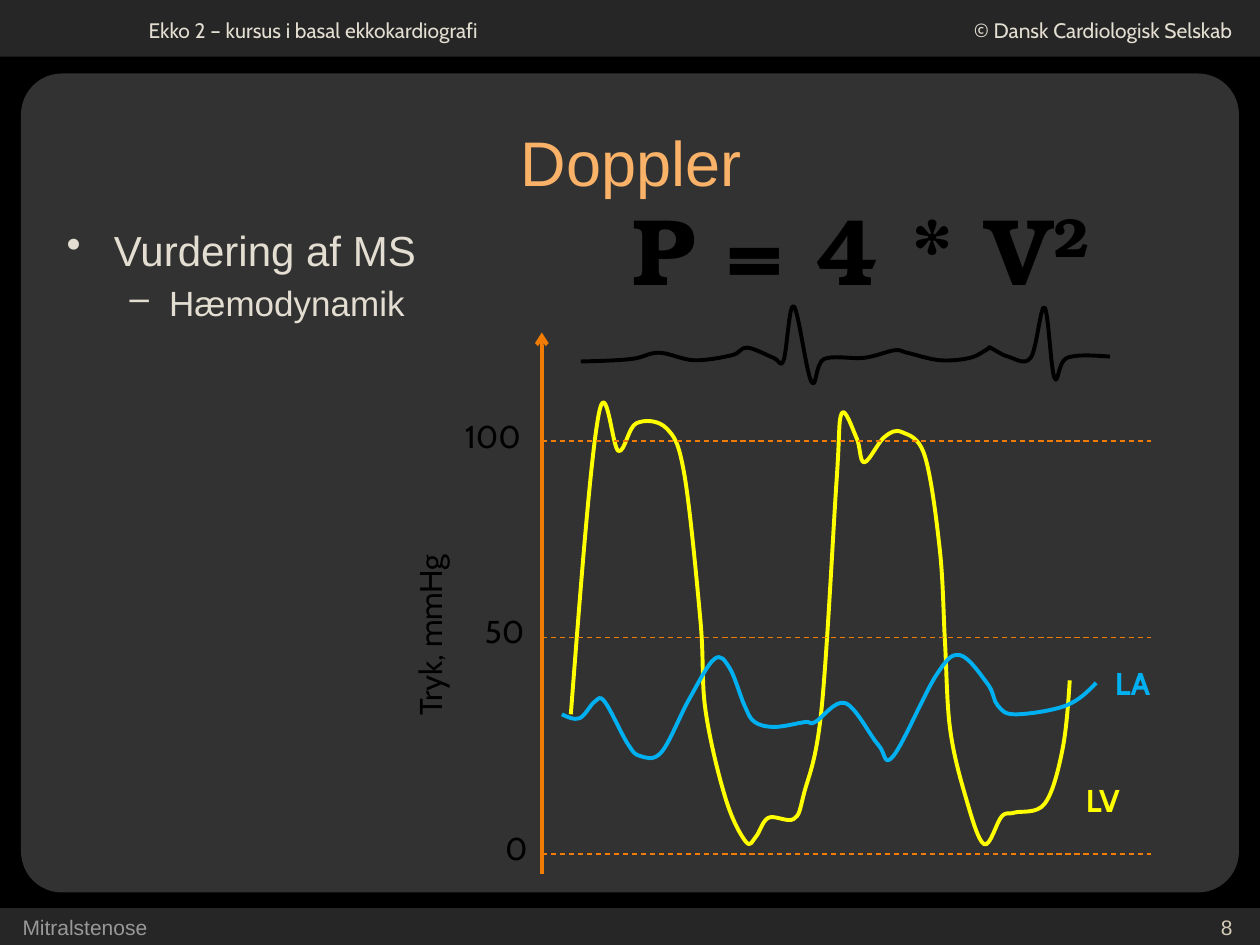
from lxml.etree import SubElement
from pptx import Presentation
from pptx.dml.color import RGBColor
from pptx.enum.dml import MSO_LINE
from pptx.enum.shapes import MSO_CONNECTOR, MSO_SHAPE
from pptx.enum.text import MSO_ANCHOR, PP_ALIGN
from pptx.oxml.ns import qn
from pptx.util import Pt

BLACK = RGBColor(0x00, 0x00, 0x00)
BAR = RGBColor(0x26, 0x26, 0x26)
PANEL = RGBColor(0x32, 0x32, 0x32)
CREAM = RGBColor(0xE3, 0xDE, 0xD1)
SAND = RGBColor(0xD3, 0xCB, 0xB6)
GREY = RGBColor(0x99, 0x99, 0x99)
PEACH = RGBColor(0xF9, 0xB2, 0x68)
ORANGE = RGBColor(0xF0, 0x7C, 0x03)
YELLOW = RGBColor(0xFF, 0xFF, 0x00)
BLUE = RGBColor(0x00, 0xB0, 0xF0)

PANELS = [
    (MSO_SHAPE.RECTANGLE, (0, 519, 720, 21), BAR),
    (MSO_SHAPE.RECTANGLE, (0, 0, 720, 32.4), BAR),
    (MSO_SHAPE.ROUNDED_RECTANGLE, (12, 42, 696, 468), PANEL),
]

# text, box, font, size, colour, bold, alignment
HEADER_FOOTER = [
    ("Ekko 2 – kursus i basal ekkokardiografi", (77.8, 6.5, 270, 21.6),
     "Cabin", 12, CREAM, False, PP_ALIGN.LEFT),
    ("© Dansk Cardiologisk Selskab", (496, 6.5, 215.3, 21.6),
     "Cabin", 12, CREAM, False, PP_ALIGN.RIGHT),
    ("8", (543.6, 519, 167.8, 18), "Arial", 12, SAND, False, PP_ALIGN.RIGHT),
    ("Mitralstenose", (5.8, 519, 228.2, 18), "Arial", 12, GREY, False, PP_ALIGN.LEFT),
]
CURVE_LABELS = [
    ("LV", (613.4, 442.8, 50.4, 28.8), YELLOW),
    ("LA", (630, 375.8, 50.4, 28.8), BLUE),
]

# text, bullet, level, size, left margin, hanging indent, space before
BULLETS = [
    ("Vurdering af MS", "•", 0, 24, 27, 27, 0),
    ("Hæmodynamik", "–", 1, 20, 58.5, 22.5, 4),
]

AXIS_X, AXIS_TOP, AXIS_BOTTOM, GRID_RIGHT = 309.6, 190, 499.7, 658
# value, height of the grid line, left and top of the value
GRID = [("0", 488, 281.5, 470.2), ("50", 364.3, 270, 346.3), ("100", 252, 258.5, 234.7)]

LV_PRESSURE = [
    (326.2, 408.2), (342, 237.6), (353.5, 257.8), (363.6, 241.9), (380.9, 244.8),
    (391, 270.7), (400.3, 355), (403.2, 406.1), (414.7, 456.5), (426.2, 481),
    (432, 478.1), (439.2, 467.3), (453.6, 468), (459.4, 453.6), (469.4, 406.1),
    (478.1, 274.3), (481, 236.2), (489.6, 250.6), (493.9, 264.2), (505.4, 249.8),
    (515.5, 247), (528.5, 260.6), (537.1, 314.6), (540, 366.5), (542.9, 416.2),
    (551.5, 454.3), (562.3, 482.4), (572.4, 466.6), (579.6, 464.4), (596.9, 459.4),
    (607, 429.1), (611.3, 388.8),
]
LA_PRESSURE = [
    (321.1, 408.2), (331.2, 410.4), (339.8, 401), (345.6, 401), (358.6, 424.8),
    (365.8, 432), (378, 429.8), (393.8, 399.6), (408.2, 376.6), (416.9, 381.6),
    (425.5, 403.2), (431.3, 412.6), (442.8, 415.4), (460.1, 412.6), (465.8, 412.6),
    (483.1, 401.8), (501.8, 425.5), (510.5, 432), (535, 385.9), (548.6, 374.4),
    (564.5, 391), (570.2, 403.2), (580.3, 408.2), (609.1, 403.2), (626.4, 390.2),
]
ECG = [
    (331.9, 206.6), (360.7, 205.2), (376.6, 201.6), (396.7, 205.9), (418.3, 203),
    (427, 198.7), (442.1, 204.5), (447.8, 205.9), (453.6, 175), (463.7, 218.2),
    (470.9, 205.2), (493.9, 204.5), (511.2, 200.2), (518.4, 201.6), (537.1, 205.9),
    (554.4, 204.5), (564.5, 199.4), (565.9, 198.7), (576, 203.8), (589, 204.5),
    (596.9, 175.7), (602.6, 216), (609.8, 204.5), (634.3, 203.8),
]
CURVES = [(LV_PRESSURE, YELLOW), (LA_PRESSURE, BLUE), (ECG, BLACK)]


def style(font, name, size, color, bold=False):
    font.name, font.size, font.bold = name, Pt(size), bold
    font.color.rgb = color


def add_text(shapes, text, box, name, size, color, bold=False, align=PP_ALIGN.LEFT):
    label = shapes.add_textbox(*map(Pt, box))
    label.text_frame.word_wrap = True
    label.text_frame.text = text
    paragraph = label.text_frame.paragraphs[0]
    paragraph.alignment = align
    style(paragraph.runs[0].font, name, size, color, bold)
    return label


def add_line(shapes, start, end, width):
    line = shapes.add_connector(MSO_CONNECTOR.STRAIGHT, *map(Pt, start + end))
    line.line.color.rgb = ORANGE
    line.line.width = Pt(width)
    SubElement(line._element.spPr, qn("a:effectLst"))
    return line


def bezier_points(knots):
    """Control and end points of a smooth curve whose slope at each knot follows its neighbours."""
    slopes = [((c[0] - a[0]) / 6, (c[1] - a[1]) / 6) for a, c in zip(knots, knots[2:])]
    leaving = [(x + dx, y + dy) for (x, y), (dx, dy) in zip(knots[1:], slopes)]
    arriving = [(x - dx, y - dy) for (x, y), (dx, dy) in zip(knots[1:], slopes)]

    def middle(a, b):
        return (a[0] + b[0]) / 2, (a[1] + b[1]) / 2

    leaving.insert(0, middle(knots[0], arriving[0]))
    arriving.append(middle(leaving[-1], knots[-1]))
    return [point for segment in zip(leaving, arriving, knots[1:]) for point in segment]


def add_curve(shapes, knots, color):
    builder = shapes.build_freeform(*map(Pt, knots[0]))
    builder.add_line_segments([(Pt(x), Pt(y)) for x, y in bezier_points(knots)], close=False)
    curve = builder.convert_to_shape()
    path = curve._element.find(".//" + qn("a:path"))
    lines = path.findall(qn("a:lnTo"))
    for segment in zip(lines[::3], lines[1::3], lines[2::3]):
        cubic = SubElement(path, qn("a:cubicBezTo"))
        for line_to in segment:
            cubic.append(line_to[0])
            path.remove(line_to)
    curve.shadow.inherit = False
    curve.fill.background()
    curve.line.color.rgb = color
    curve.line.width = Pt(2.25)


def add_bullets(shapes):
    frame = shapes.add_textbox(*map(Pt, (31, 124.5, 365.8, 144))).text_frame
    frame.word_wrap = True
    for i, (text, bullet, level, size, margin, hanging, before) in enumerate(BULLETS):
        paragraph = frame.add_paragraph() if i else frame.paragraphs[0]
        paragraph.text = text
        paragraph.level = level
        paragraph.space_before = Pt(before)
        properties = paragraph._p.get_or_add_pPr()
        properties.set("marL", str(Pt(margin)))
        properties.set("indent", str(-Pt(hanging)))
        SubElement(properties, qn("a:buChar"), char=bullet)
        style(paragraph.runs[0].font, "Arial", size, CREAM)


def main():
    deck = Presentation()
    deck.slide_width, deck.slide_height = Pt(720), Pt(540)
    slide = deck.slides.add_slide(deck.slide_layouts[5])
    slide.background.fill.solid()
    slide.background.fill.fore_color.rgb = BLACK
    shapes = slide.shapes

    for kind, box, color in PANELS:
        panel = shapes.add_shape(kind, *map(Pt, box))
        panel.shadow.inherit = False
        panel.fill.solid()
        panel.fill.fore_color.rgb = color
        panel.line.fill.background()
    panel.adjustments[0] = 0.05

    title = shapes.title
    panel._element.addnext(title._element)  # the title lies in front of the panels
    title.left, title.top, title.width, title.height = map(Pt, (36.7, 60.5, 648, 63.4))
    title.text_frame.text = "Doppler"
    title.text_frame.vertical_anchor = MSO_ANCHOR.MIDDLE
    title.text_frame.paragraphs[0].alignment = PP_ALIGN.CENTER
    style(title.text_frame.paragraphs[0].runs[0].font, "Arial", 36, PEACH)

    for row in HEADER_FOOTER:
        add_text(shapes, *row)
    add_bullets(shapes)

    formula = add_text(shapes, "P = 4 * V", (354.2, 105.8, 303.8, 72.7),
                       "TeX Gyre Bonum", 54, BLACK, True)
    exponent = formula.text_frame.paragraphs[0].add_run()
    exponent.text = "2"
    style(exponent.font, "TeX Gyre Bonum", 54, BLACK, True)
    exponent.font._element.set("baseline", "30000")

    for knots, color in CURVES:
        add_curve(shapes, knots, color)

    axis = add_line(shapes, (AXIS_X, AXIS_TOP), (AXIS_X, AXIS_BOTTOM), 2.25)
    SubElement(axis.line._get_or_add_ln(), qn("a:headEnd"), type="arrow")
    for value, y, left, top in GRID:
        add_line(shapes, (AXIS_X, y), (GRID_RIGHT, y), 0.75).line.dash_style = MSO_LINE.DASH
        add_text(shapes, value, (left, top, 73.4, 28.8), "Cabin", 18, BLACK)
    unit = add_text(shapes, "Tryk, mmHg", (177.8, 334, 135.4, 28.8), "Cabin", 18, BLACK)
    unit.rotation = 270
    for text, box, color in CURVE_LABELS:
        add_text(shapes, text, box, "Cabin", 18, color, True)

    deck.save("out.pptx")


if __name__ == "__main__":
    main()
